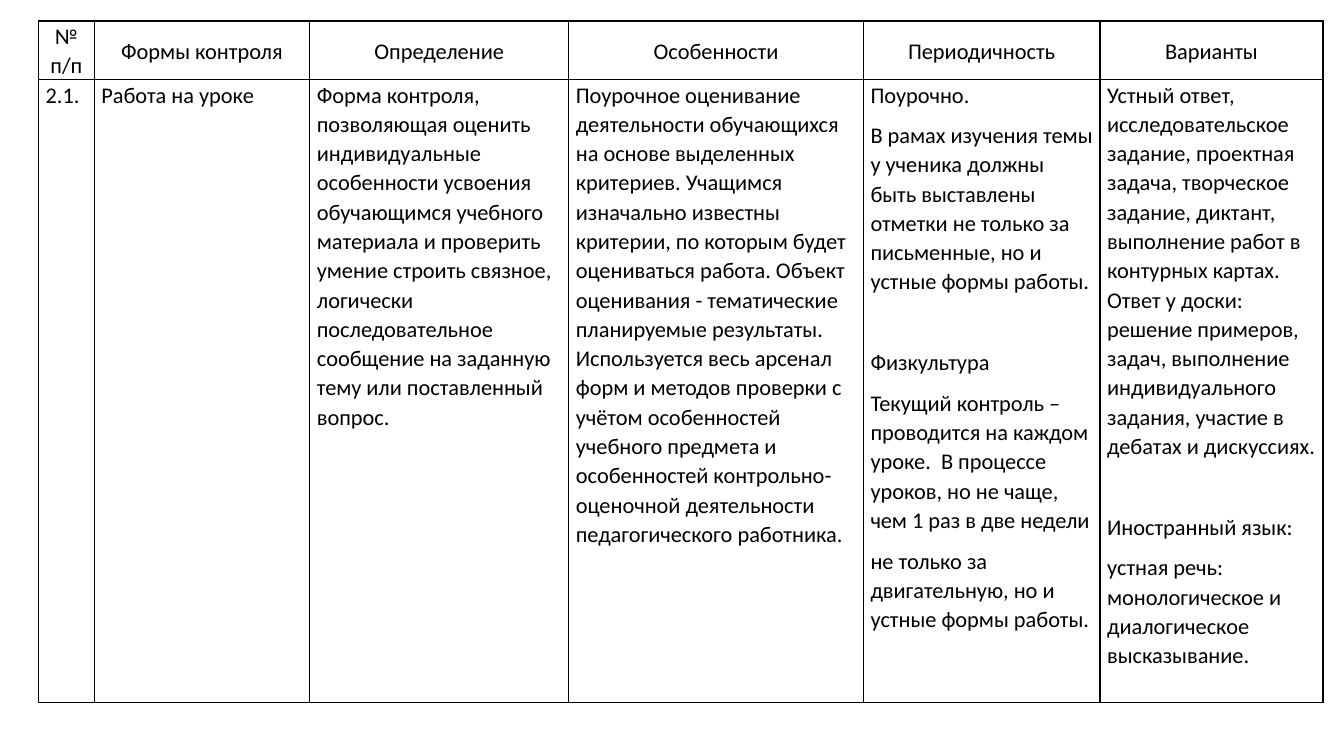
"""Build a slide with a table describing forms of classroom assessment."""
from lxml import etree
from pptx import Presentation
from pptx import util as u
from pptx.dml.color import RGBColor
from pptx.enum import text
from pptx.oxml import ns

HEADERS = ["№ п/п", "Формы контроля", "Определение", "Особенности", "Периодичность", "Варианты"]
DETAILS = [
    ["2.1."],
    ["Работа на уроке"],
    ["Форма контроля, позволяющая оценить индивидуальные особенности усвоения обучающимся "
     "учебного материала и проверить умение строить связное, логически последовательное "
     "сообщение на заданную тему или поставленный вопрос."],
    ["Поурочное оценивание деятельности обучающихся на основе выделенных критериев. "
     "Учащимся изначально известны критерии, по которым будет оцениваться работа. "
     "Объект оценивания - тематические планируемые результаты. Используется весь арсенал "
     "форм и методов проверки с учётом особенностей учебного предмета и особенностей "
     "контрольно-оценочной деятельности педагогического работника."],
    ["Поурочно.",
     "В рамах изучения темы у ученика должны быть выставлены отметки не только за "
     "письменные, но и устные формы работы.",
     "Физкультура",
     "Текущий контроль –проводится на каждом уроке.  В процессе уроков, но не чаще, "
     "чем 1 раз в две недели",
     "не только за двигательную, но и устные формы работы."],
    ["Устный ответ, исследовательское задание, проектная задача, творческое задание, "
     "диктант, выполнение работ в контурных картах. Ответ у доски: решение примеров, "
     "задач, выполнение индивидуального задания, участие в дебатах и дискуссиях.",
     "Иностранный язык:",
     "устная речь: монологическое и диалогическое высказывание."],
]
SECTION_STARTS = {"Физкультура", "Иностранный язык:"}

SLIDE_SIZE = (960, 540)
TABLE_LEFT, TABLE_TOP = 27.5, 15
COLUMN_WIDTHS = [39.8, 154, 185, 210.5, 169, 159.3]
ROW_HEIGHTS = [42, 445]
SIDE_MARGIN = 5.1
SECTION_GAP = 28.9
BLACK = RGBColor(0, 0, 0)


def draw_borders(cell, color=BLACK, width=1):
    """Draw a solid line on all four sides of a cell."""
    properties = cell._tc.get_or_add_tcPr()
    for side in ("a:lnL", "a:lnR", "a:lnT", "a:lnB"):
        line = etree.SubElement(properties, ns.qn(side), w=str(u.Pt(width)))
        fill = etree.SubElement(line, ns.qn("a:solidFill"))
        etree.SubElement(fill, ns.qn("a:srgbClr"), val=str(color))


def write_cell(cell, paragraphs, align=text.PP_ALIGN.LEFT, anchor=text.MSO_ANCHOR.TOP,
               size=16, font="Calibri", color=BLACK):
    """Write formatted paragraphs into a bordered cell."""
    draw_borders(cell)
    cell.fill.background()
    cell.margin_left = cell.margin_right = u.Pt(SIDE_MARGIN)
    cell.margin_top = cell.margin_bottom = 0
    cell.vertical_anchor = anchor
    frame = cell.text_frame
    for index, words in enumerate(paragraphs):
        para = frame.add_paragraph() if index else frame.paragraphs[0]
        para.alignment = align
        para.line_spacing = 1.07
        para.space_after = u.Pt(8)
        para.space_before = u.Pt(SECTION_GAP if words in SECTION_STARTS else 0)
        span = para.add_run()
        span.text = words
        span.font.size = u.Pt(size)
        span.font.name = font
        span.font.bold = False
        span.font.color.rgb = color


def main():
    """Create the deck and save it."""
    deck = Presentation()
    deck.slide_width, deck.slide_height = map(u.Pt, SLIDE_SIZE)
    page = deck.slides.add_slide(deck.slide_layouts[6])
    table = page.shapes.add_table(
        len(ROW_HEIGHTS), len(COLUMN_WIDTHS), u.Pt(TABLE_LEFT), u.Pt(TABLE_TOP),
        u.Pt(sum(COLUMN_WIDTHS)), u.Pt(sum(ROW_HEIGHTS))).table
    table.first_row = table.horz_banding = False
    for row, height in zip(table.rows, ROW_HEIGHTS):
        row.height = u.Pt(height)
    for index, (width, header, details) in enumerate(zip(COLUMN_WIDTHS, HEADERS, DETAILS)):
        table.columns[index].width = u.Pt(width)
        anchor = text.MSO_ANCHOR.MIDDLE if index else text.MSO_ANCHOR.TOP
        write_cell(table.cell(0, index), [header], align=text.PP_ALIGN.CENTER, anchor=anchor)
        write_cell(table.cell(1, index), details)
    deck.save("out.pptx")


if __name__ == "__main__":
    main()
